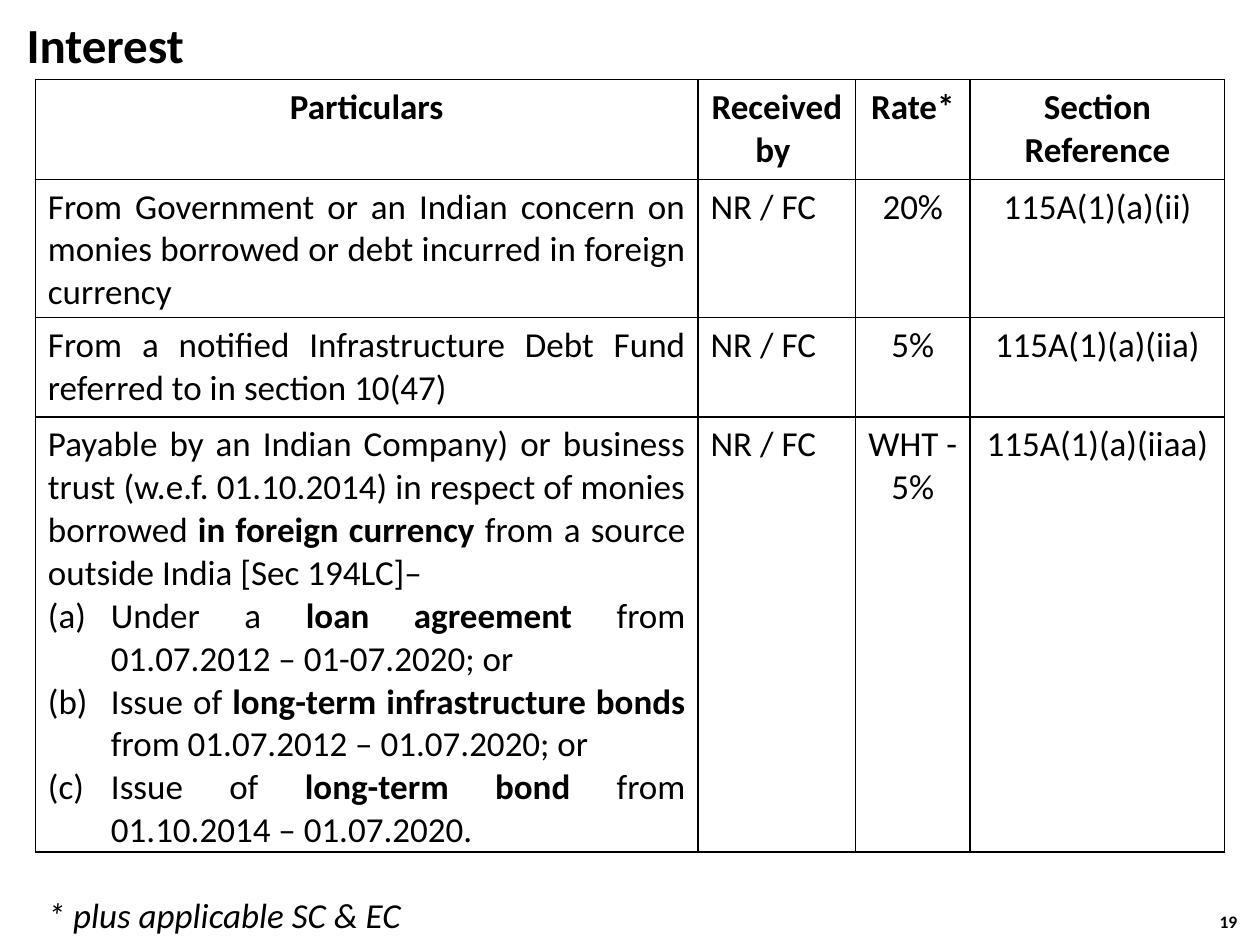
from dataclasses import dataclass

from lxml.etree import SubElement
from pptx import Presentation
from pptx.dml.color import RGBColor
from pptx.enum.text import MSO_ANCHOR, MSO_AUTO_SIZE, PP_ALIGN
from pptx.oxml.ns import qn
from pptx.util import Pt


@dataclass(frozen=True)
class Theme:
    font: str = "Calibri"
    ink: RGBColor = RGBColor(0, 0, 0)
    title: int = 28
    body: int = 20
    number: int = 10
    border: int = 1


LEFT, CENTER, JUSTIFY = PP_ALIGN.LEFT, PP_ALIGN.CENTER, PP_ALIGN.JUSTIFY

# Table content: ** encloses bold words, a leading # marks a lettered item
HEADINGS = ["Particulars", "Received by ", "Rate*", "Section Reference"]
INTEREST_ROWS = [
    ["From Government or an Indian concern on monies borrowed or debt incurred in foreign currency",
     "NR / FC", "20%", "115A(1)(a)(ii)"],
    ["From a notified Infrastructure Debt Fund referred to in section 10(47)",
     "NR / FC", "5%", "115A(1)(a)(iia)"],
    ["Payable by an Indian Company) or business trust (w.e.f. 01.10.2014) in respect of monies "
     "borrowed **in foreign currency** from a source outside India [Sec 194LC]–\n"
     "#Under a **loan agreement** from 01.07.2012 – 01-07.2020; or\n"
     "#Issue of **long-term infrastructure bonds** from 01.07.2012 – 01.07.2020; or\n"
     "#Issue of **long-term bond** from 01.10.2014 – 01.07.2020.",
     "NR / FC", "WHT - 5%", "115A(1)(a)(iiaa)"],
]
COLUMN_WIDTHS = [378.7, 90, 65.5, 145.5]
ROW_HEIGHTS = [57, 79, 57, 247]
COLUMN_ALIGNMENTS = [JUSTIFY, LEFT, CENTER, CENTER]


class SlideBuilder:
    def __init__(self, slide, theme):
        self.slide = slide
        self.theme = theme

    def style(self, run, size, bold=False, italic=False):
        font = run.font
        font.name, font.size = self.theme.font, Pt(size)
        font.bold, font.italic = bold, italic
        font.color.rgb = self.theme.ink

    def fill_frame(self, frame, text, size, align=LEFT, **emphasis):
        frame.text = text
        frame.word_wrap = True
        frame.vertical_anchor = MSO_ANCHOR.TOP
        frame.paragraphs[0].alignment = align
        self.style(frame.paragraphs[0].runs[0], size, **emphasis)

    def title(self, text, left, top, width, height):
        heading = self.slide.shapes.title
        heading.left, heading.top = Pt(left), Pt(top)
        heading.width, heading.height = Pt(width), Pt(height)
        self.fill_frame(heading.text_frame, text, self.theme.title, bold=True)
        heading.text_frame.auto_size = MSO_AUTO_SIZE.NONE

    def note(self, text, left, top, width, height, size, **look):
        box = self.slide.shapes.add_textbox(Pt(left), Pt(top), Pt(width), Pt(height))
        self.fill_frame(box.text_frame, text, size, **look)

    def letter(self, paragraph):
        properties = paragraph._p.get_or_add_pPr()
        properties.set("marL", str(Pt(36)))
        properties.set("indent", str(Pt(-36)))
        SubElement(properties, qn("a:buFont"), typeface="+mj-lt")
        SubElement(properties, qn("a:buAutoNum"), type="alphaLcParenBoth")

    def frame_cell(self, cell):
        properties = cell._tc.get_or_add_tcPr()
        for side in ("a:lnL", "a:lnR", "a:lnT", "a:lnB"):
            line = SubElement(properties, qn(side), w=str(Pt(self.theme.border)))
            fill = SubElement(line, qn("a:solidFill"))
            SubElement(fill, qn("a:srgbClr"), val=str(self.theme.ink))
        cell.fill.background()
        cell.margin_bottom = 0

    def cell_text(self, cell, text, align, bold):
        frame = cell.text_frame
        for index, line in enumerate(text.split("\n")):
            paragraph = frame.paragraphs[0] if index == 0 else frame.add_paragraph()
            paragraph.alignment = align
            if line.startswith("#"):
                self.letter(paragraph)
            for part, words in enumerate(line.lstrip("#").split("**")):
                run = paragraph.add_run()
                run.text = words
                self.style(run, self.theme.body, bold=bold or part % 2 == 1)

    def table(self, rows, left, top):
        table = self.slide.shapes.add_table(
            len(rows), len(COLUMN_WIDTHS), Pt(left), Pt(top),
            Pt(sum(COLUMN_WIDTHS)), Pt(sum(ROW_HEIGHTS))).table
        table.first_row = table.horz_banding = False
        for column, width in zip(table.columns, COLUMN_WIDTHS):
            column.width = Pt(width)
        for r, texts in enumerate(rows):
            table.rows[r].height = Pt(ROW_HEIGHTS[r])
            for c, text in enumerate(texts):
                cell = table.cell(r, c)
                self.frame_cell(cell)
                self.cell_text(cell, text, CENTER if r == 0 else COLUMN_ALIGNMENTS[c], r == 0)


def main():
    deck = Presentation()
    deck.slide_width, deck.slide_height = Pt(720), Pt(540)
    theme = Theme()
    page = SlideBuilder(deck.slides.add_slide(deck.slide_layouts[5]), theme)

    # Heading
    page.title("Interest", 8, 4.5, 451.5, 41)
    # Interest rates by payer
    page.table([HEADINGS] + INTEREST_ROWS, 20.2, 45.5)
    # Footnote and page number
    page.note("* plus applicable SC & EC", 20.2, 507, 451.5, 31.5, theme.body, italic=True)
    page.note("19", 682.5, 517, 39, 23.5, theme.number, align=CENTER, bold=True)

    deck.save("out.pptx")


if __name__ == "__main__":
    main()
